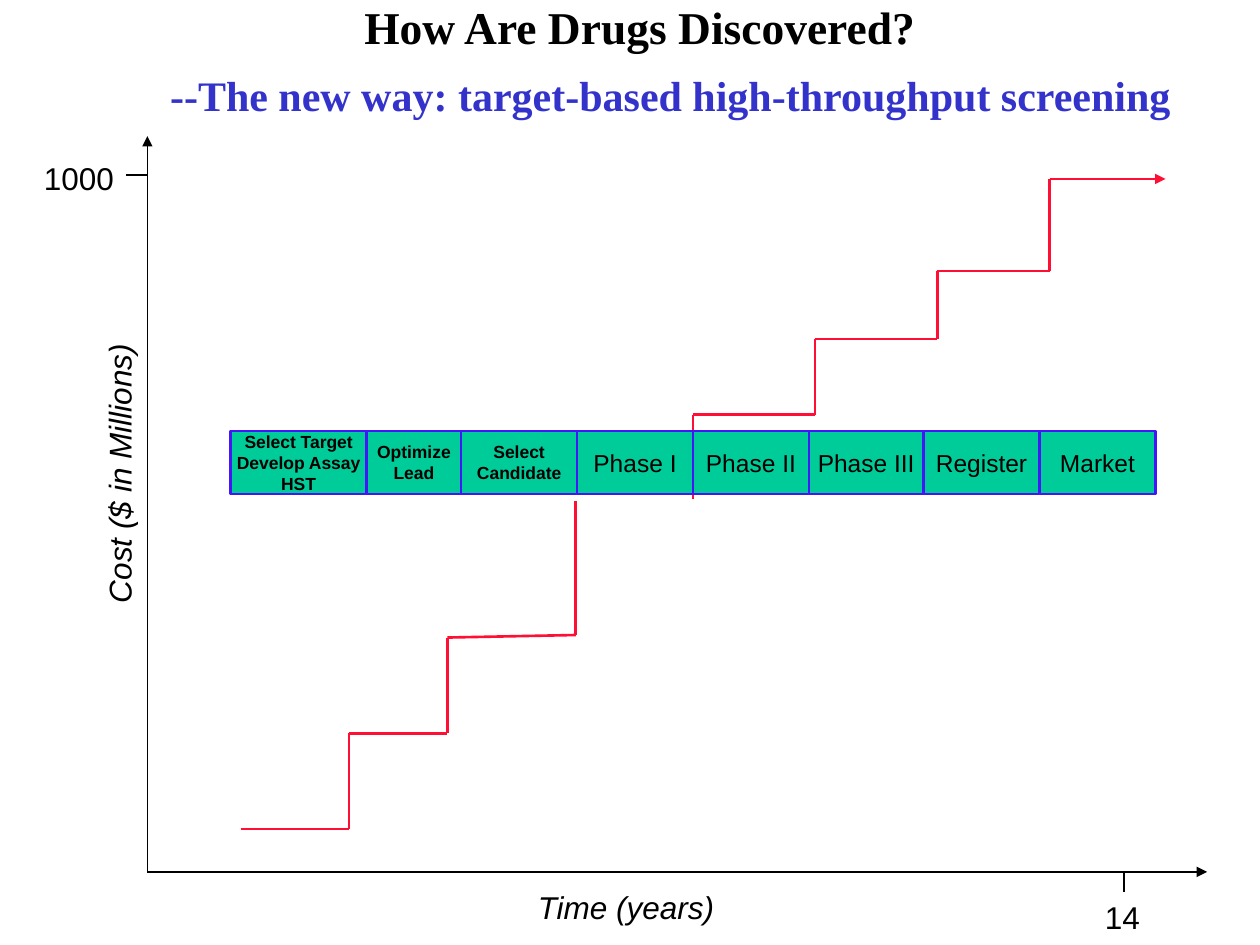
import itertools
from dataclasses import dataclass

import pptx
import pptx.dml.color
import pptx.enum.shapes
import pptx.enum.text
import pptx.oxml
import pptx.oxml.ns
import pptx.util

EMU_PER_PX = 9144  # 100 px to the inch
ALIGN = pptx.enum.text.PP_ALIGN
ANCHOR = pptx.enum.text.MSO_ANCHOR


@dataclass(frozen=True)
class Theme:
    ink: str = "000000"
    subtitle: str = "3333CC"
    stairs: str = "FF0F34"
    stage_fill: str = "00CC99"
    stage_line: str = "4316FA"
    heading_font: str = "Times New Roman"
    label_font: str = "Arial"
    title_size: int = 26
    subtitle_size: int = 24
    axis_size: int = 18
    stage_size: int = 14
    small_stage_size: int = 10
    axis_width: float = 1
    stage_width: float = 1.5


@dataclass(frozen=True)
class Box:
    left: int
    top: int
    width: int
    height: int

    def inner(self, x, y, width, height):
        return Box(self.left + x, self.top + y, width, height)

    def point(self, x, y):
        return px(self.left + x), px(self.top + y)

    def emu(self):
        return px(self.left), px(self.top), px(self.width), px(self.height)


THEME = Theme()
PLOT = Box(117, 108, 841, 584)

# Corners of the cost curve, from the top left of the plot
EARLY_COST = [(74, 550), (160, 550), (160, 474), (238, 474),
              (238, 398), (340, 396), (340, 290)]
CLINICAL_COST = [(433, 288), (433, 221), (530, 221), (530, 161), (627, 161),
                 (627, 107), (716, 107), (716, 34), (808, 34)]

RESEARCH_STAGES = [("Select Target\nDevelop Assay\nHST", 108),
                   ("Optimize\nLead", 75),
                   ("Select\nCandidate", 92)]
CLINICAL_STAGES = ["Phase I", "Phase II", "Phase III", "Register", "Market"]


def px(length):
    return pptx.util.Emu(length * EMU_PER_PX)


def rgb(code):
    return pptx.dml.color.RGBColor.from_string(code)


def write(frame, text, size, color=THEME.ink, font=THEME.label_font,
          bold=False, italic=False, align=ALIGN.LEFT):
    frame.text = text
    for paragraph in frame.paragraphs:
        paragraph.alignment = align
        paragraph.space_before = pptx.util.Pt(0)
        for run in paragraph.runs:
            run.font.name = font
            run.font.size = pptx.util.Pt(size)
            run.font.bold = bold
            run.font.italic = italic
            run.font.color.rgb = rgb(color)


def add_label(slide, box, text, rotation=0, italic=False):
    label = slide.shapes.add_textbox(*box.emu())
    label.rotation = rotation
    label.text_frame.word_wrap = True
    write(label.text_frame, text, THEME.axis_size, italic=italic)


def add_line(slide, start, end, color, width, arrow=False):
    line = slide.shapes.add_connector(
        pptx.enum.shapes.MSO_CONNECTOR.STRAIGHT, *start, *end)
    line.line.color.rgb = rgb(color)
    line.line.width = pptx.util.Pt(width)
    if arrow:
        tail = pptx.oxml.parse_xml(
            f'<a:tailEnd {pptx.oxml.ns.nsdecls("a")} type="triangle"/>')
        line.line._get_or_add_ln().append(tail)
    properties = line._element.spPr
    properties.append(properties.makeelement(pptx.oxml.ns.qn("a:effectLst"), {}))


def place_heading(holder, box, text, size, color, align, anchor):
    holder.left, holder.top, holder.width, holder.height = box.emu()
    frame = holder.text_frame
    frame.auto_size = pptx.enum.text.MSO_AUTO_SIZE.NONE
    frame.word_wrap = True
    frame.vertical_anchor = anchor
    write(frame, text, size, color, THEME.heading_font, bold=True, align=align)


def add_headings(slide, box):
    title, subtitle = slide.placeholders
    place_heading(title, box.inner(0, 0, 850, 42), "How Are Drugs Discovered?",
                  THEME.title_size, THEME.ink, ALIGN.CENTER, ANCHOR.MIDDLE)
    place_heading(subtitle, box.inner(42, 50, 817, 50),
                  "--The new way: target-based high-throughput screening",
                  THEME.subtitle_size, THEME.subtitle, ALIGN.LEFT, ANCHOR.TOP)


def add_axes(slide, box):
    origin = box.point(0, box.height)
    tick_x, tick_y = 775, 31
    axis_lines = [
        (origin, box.point(0, 0), True),
        (origin, box.point(box.width, box.height), True),
        (box.point(-17, tick_y), box.point(0, tick_y), False),
        (box.point(tick_x, box.height + 16), box.point(tick_x, box.height), False),
    ]
    for start, end, arrow in axis_lines:
        add_line(slide, start, end, THEME.ink, THEME.axis_width, arrow)

    add_label(slide, box.inner(-138, 245, 231, 40), "Cost ($ in Millions)",
              rotation=270, italic=True)
    add_label(slide, box.inner(300, 592, 160, 40), "Time (years)", italic=True)
    add_label(slide, box.inner(-92, 13, 76, 40), "1000")
    add_label(slide, box.inner(750, 600, 48, 40), "14")


def add_cost_stairs(slide, box, corners, arrow=False):
    """Join the corners by lines, with an optional arrowhead on the last."""
    for start, end in itertools.pairwise(corners):
        add_line(slide, box.point(*start), box.point(*end), THEME.stairs,
                 THEME.stage_width, arrow and end == corners[-1])


def add_stage(slide, box, text, size, bold):
    stage = slide.shapes.add_shape(
        pptx.enum.shapes.MSO_SHAPE.RECTANGLE, *box.emu())
    stage.shadow.inherit = False
    stage.fill.solid()
    stage.fill.fore_color.rgb = rgb(THEME.stage_fill)
    stage.line.color.rgb = rgb(THEME.stage_line)
    stage.line.width = pptx.util.Pt(THEME.stage_width)
    frame = stage.text_frame
    frame.margin_left = frame.margin_right = 0
    frame.margin_top = frame.margin_bottom = 0
    frame.word_wrap = False
    frame.vertical_anchor = ANCHOR.MIDDLE
    write(frame, text, size, bold=bold, align=ALIGN.CENTER)


def add_stage_band(slide, box):
    """Research stages have their own widths; clinical ones share the rest."""
    x = 0
    for text, width in RESEARCH_STAGES:
        add_stage(slide, box.inner(x, 0, width, box.height), text,
                  THEME.small_stage_size, bold=True)
        x += width
    edges = [x + round((box.width - x) * step / len(CLINICAL_STAGES))
             for step in range(len(CLINICAL_STAGES) + 1)]
    for text, (left, right) in zip(CLINICAL_STAGES, itertools.pairwise(edges)):
        add_stage(slide, box.inner(left, 0, right - left, box.height), text,
                  THEME.stage_size, bold=False)


def main():
    deck = pptx.Presentation()
    deck.slide_width, deck.slide_height = px(1000), px(750)
    slide = deck.slides.add_slide(deck.slide_layouts[0])
    add_headings(slide, Box(83, 0, 859, 100))
    add_cost_stairs(slide, PLOT, EARLY_COST)
    add_cost_stairs(slide, PLOT, CLINICAL_COST, arrow=True)
    add_stage_band(slide, PLOT.inner(66, 234, 734, 50))
    add_axes(slide, PLOT)
    deck.save("out.pptx")


if __name__ == "__main__":
    main()
